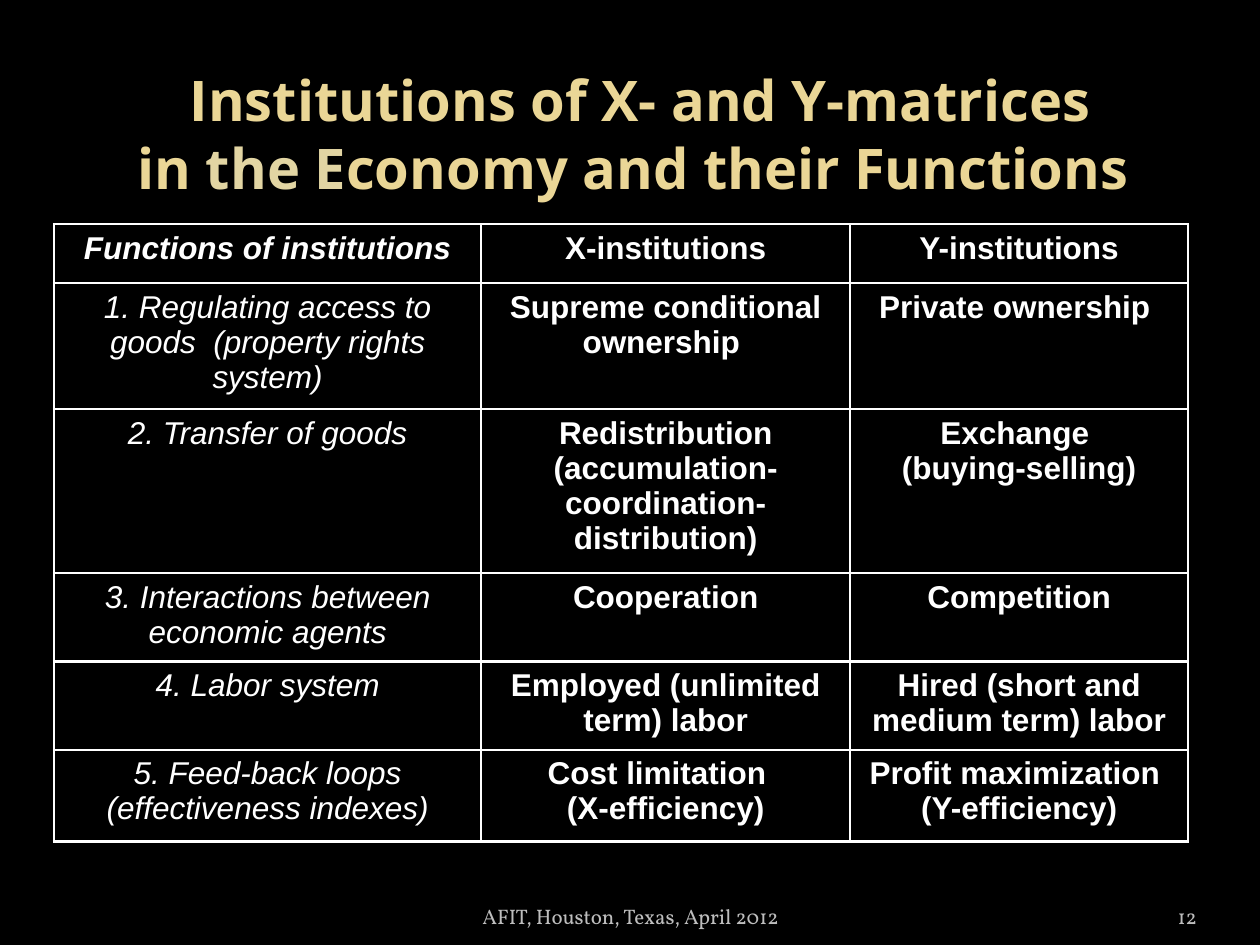
from lxml import etree
from pptx import Presentation
from pptx.dml.color import RGBColor
from pptx.enum import text
from pptx.oxml import ns
from pptx.util import Cm, Pt

BLACK = RGBColor(0x00, 0x00, 0x00)
WHITE = RGBColor(0xFF, 0xFF, 0xFF)
GOLD = RGBColor(0xEA, 0xD6, 0x96)
PALE_GOLD = RGBColor(0xE2, 0xD5, 0xA3)
GREY = RGBColor(0xBD, 0xBD, 0xBD)

CENTER, RIGHT = text.PP_ALIGN.CENTER, text.PP_ALIGN.RIGHT
MIDDLE, BOTTOM = text.MSO_ANCHOR.MIDDLE, text.MSO_ANCHOR.BOTTOM

COL_WIDTHS = [8.61, 7.44, 6.81]
ROW_HEIGHTS = [1.19, 1.7, 2.84, 1.75, 1.37, 1.85]
ROWS = [
    ("Functions of institutions", "X-institutions", "Y-institutions"),
    ("1. Regulating access to goods  (property rights system)",
     "Supreme conditional ownership ", "Private ownership "),
    ("2. Transfer of goods",
     "Redistribution (accumulation-coordination-distribution)",
     "Exchange \n(buying-selling)"),
    ("3. Interactions between economic agents", "Cooperation", "Competition"),
    ("4. Labor system", "Employed (unlimited term) labor",
     "Hired (short and medium term) labor"),
    ("5. Feed-back loops (effectiveness indexes)",
     "Cost limitation  \n(Х-efficiency)",
     "Profit maximization \n(Y-efficiency)"),
]


def add_run(p, content, font, size, color, bold=False, italic=False):
    r = p.add_run()
    r.text = content
    f = r.font
    f.name, f.size, f.bold, f.italic = font, Pt(size), bold, italic
    f.color.rgb = color


def write(tf, content, align=CENTER, **fmt):
    """Fill a text frame, one paragraph for each line of content."""
    for i, line in enumerate(content.split("\n")):
        p = tf.add_paragraph() if i else tf.paragraphs[0]
        p.alignment = align
        add_run(p, line, **fmt)


def add_text_frame(s, left, top, width, height, anchor):
    sp = s.shapes.add_textbox(Cm(left), Cm(top), Cm(width), Cm(height))
    tf = sp.text_frame
    tf.word_wrap = True
    tf.vertical_anchor = anchor
    return tf


def add_title(s):
    p = add_text_frame(s, 1.27, 0.69, 23.29, 3.99, MIDDLE).paragraphs[0]
    p.alignment = CENTER
    fmt = dict(font="Open Sans", size=32, bold=True)
    add_run(p, " Institutions of X- and Y-matrices ", color=GOLD, **fmt)
    p.add_line_break()
    add_run(p, "in ", color=GOLD, **fmt)
    add_run(p, "the E", color=PALE_GOLD, **fmt)
    add_run(p, "conomy and their Functions ", color=GOLD, **fmt)


def set_borders(cell, color, width):
    tc_pr = cell._tc.get_or_add_tcPr()
    for i, side in enumerate(("lnL", "lnR", "lnT", "lnB")):
        ln = etree.Element(ns.qn(f"a:{side}"), w=str(Pt(width)))
        fill = etree.SubElement(ln, ns.qn("a:solidFill"))
        etree.SubElement(fill, ns.qn("a:srgbClr"), val=str(color))
        tc_pr.insert(i, ln)


def add_institutions_table(s):
    frame = s.shapes.add_table(len(ROWS), len(COL_WIDTHS), Cm(1.09), Cm(4.52),
                               Cm(sum(COL_WIDTHS)), Cm(sum(ROW_HEIGHTS)))
    table = frame.table
    table.first_row = table.horz_banding = False
    for col, width in zip(table.columns, COL_WIDTHS):
        col.width = Cm(width)
    for i, (row, height) in enumerate(zip(table.rows, ROW_HEIGHTS)):
        row.height = Cm(height)
        for j, cell in enumerate(row.cells):
            cell.fill.background()
            set_borders(cell, WHITE, 1.5)
            write(cell.text_frame, ROWS[i][j], font="Arial", size=18,
                  color=WHITE, bold=i == 0 or j > 0, italic=j == 0)


def add_footer(s):
    fmt = dict(font="Vollkorn", size=12, color=GREY)
    number = add_text_frame(s, 22.02, 17.83, 2.11, 1.02, BOTTOM)
    number.margin_left = number.margin_right = 0
    write(number, "12", align=RIGHT, **fmt)
    venue = add_text_frame(s, 8.69, 17.83, 8.05, 1.02, BOTTOM)
    write(venue, "AFIT, Houston, Texas, April 2012", **fmt)


def main():
    prs = Presentation()
    prs.slide_width, prs.slide_height = Cm(25.4), Cm(19.05)
    s = prs.slides.add_slide(prs.slide_layouts[6])
    s.background.fill.solid()
    s.background.fill.fore_color.rgb = BLACK
    add_title(s)
    add_institutions_table(s)
    add_footer(s)
    prs.save("out.pptx")


if __name__ == "__main__":
    main()
